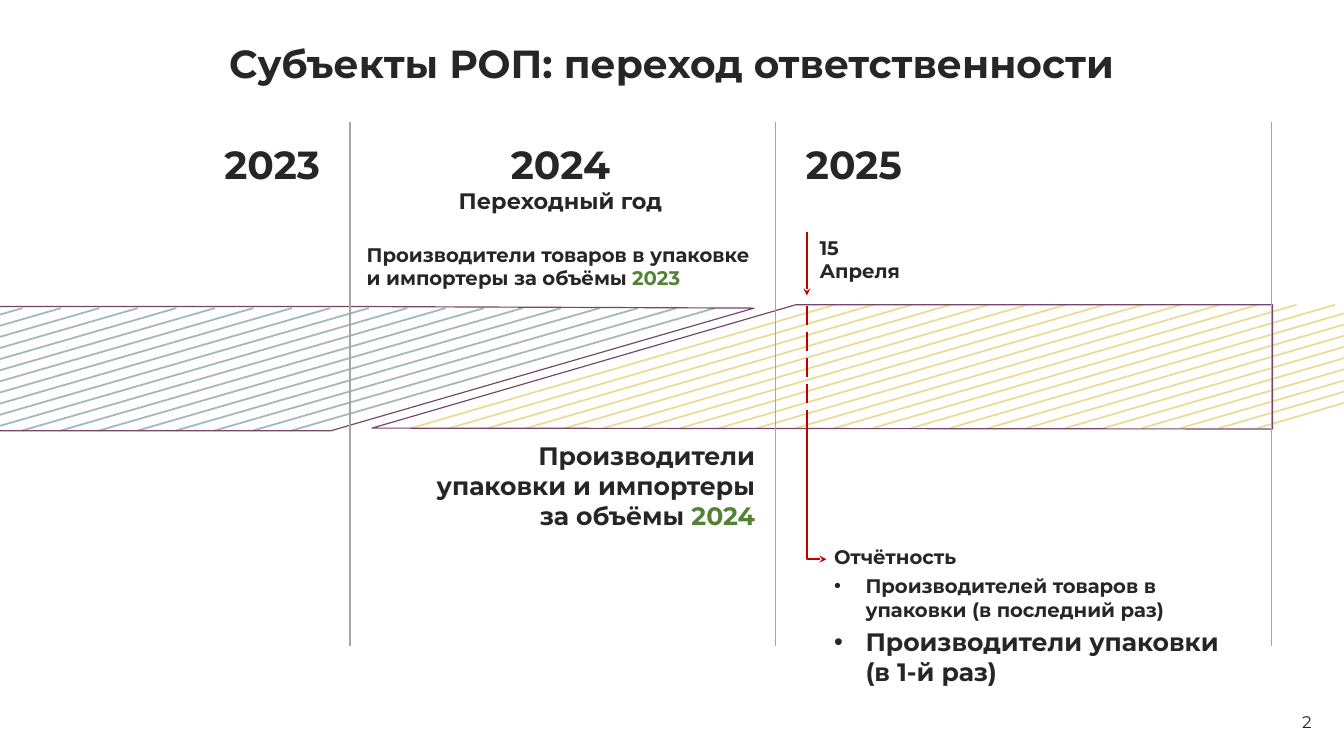
from lxml.etree import SubElement
from pptx import Presentation
from pptx.dml.color import RGBColor
from pptx.enum.dml import MSO_LINE
from pptx.enum.shapes import MSO_CONNECTOR
from pptx.enum.text import MSO_ANCHOR, MSO_AUTO_SIZE, PP_ALIGN
from pptx.oxml.ns import qn
from pptx.util import Inches, Pt

COLUMNS, ROWS = 160, 90
INK, GREEN, RED = "262626", "548235", "C00000"
TEAL, YELLOW, PLUM, GREY = "668B8A", "DFC453", "754668", "A6A6A6"
SMALL, MEDIUM, LARGE = 16.6, 21.3, 33.1


def rgb(value):
    return RGBColor.from_string(value)


class TimelineSlide:
    font_name = "Montserrat"

    def __init__(self, presentation):
        self.column = presentation.slide_width / COLUMNS
        self.row = presentation.slide_height / ROWS
        self.slide = presentation.slides.add_slide(presentation.slide_layouts[5])
        self.shapes = self.slide.shapes

    def point(self, x, y):
        return round(x * self.column), round(y * self.row)

    def title(self, text, box):
        shape = self.shapes.title
        shape.left, shape.top = self.point(*box[:2])
        shape.width, shape.height = self.point(*box[2:])
        self.fill_frame(shape, [text], LARGE, PP_ALIGN.CENTER)

    def text(self, box, paragraphs, size, align=PP_ALIGN.LEFT, **options):
        shape = self.shapes.add_textbox(*self.point(*box[:2]), *self.point(*box[2:]))
        self.fill_frame(shape, paragraphs, size, align, **options)
        return shape.text_frame

    def fill_frame(self, shape, paragraphs, size, align, bold=True):
        frame = shape.text_frame
        frame.word_wrap = True
        frame.auto_size = MSO_AUTO_SIZE.NONE
        frame.vertical_anchor = MSO_ANCHOR.TOP
        for index, text in enumerate(paragraphs):
            paragraph = frame.paragraphs[0] if index == 0 else frame.add_paragraph()
            paragraph.text = text.replace("\n", "\v")
            paragraph.alignment = align
            self.style(paragraph.font, size, bold)

    def style(self, font, size, bold):
        font.name, font.size, font.bold = self.font_name, Pt(size), bold
        font.color.rgb = rgb(INK)

    def bullet(self, frame, text, size):
        paragraph = frame.add_paragraph()
        paragraph.text = text.replace("\n", "\v")
        properties = paragraph._p.get_or_add_pPr()
        properties.set("marL", str(Inches(0.37)))
        properties.set("indent", str(-Inches(0.37)))
        SubElement(properties, qn("a:buFont"), typeface="Arial")
        SubElement(properties, qn("a:buChar"), char="•")
        self.style(paragraph.font, size, True)

    def line(self, start, end, color, width, shapes=None, opacity=None,
             dash=None, arrow=False, kind=MSO_CONNECTOR.STRAIGHT):
        connector = (shapes or self.shapes).add_connector(
            kind, *self.point(*start), *self.point(*end))
        connector.line.color.rgb = rgb(color)
        connector.line.width = Pt(width)
        if dash:
            connector.line.dash_style = dash
        properties = connector._element.spPr
        outline = properties.find(qn("a:ln"))
        if opacity:
            SubElement(outline.find(".//" + qn("a:srgbClr")), qn("a:alpha"),
                       val=str(opacity * 1000))
        if arrow:
            SubElement(outline, qn("a:tailEnd"), type="stealth")
        SubElement(properties, qn("a:effectLst"))
        return connector

    def down_then_right(self, start, end, color, width):
        """Draw an arrow with one corner as a flipped elbow turned by 270°."""
        (x1, y1), (x2, y2) = start, end
        middle_x, middle_y = (x1 + x2) / 2, (y1 + y2) / 2
        half_length, half_height = (y2 - y1) / 2, (x2 - x1) / 2
        connector = self.line(
            (middle_x + half_length, middle_y - half_height),
            (middle_x - half_length, middle_y + half_height),
            color, width, arrow=True, kind=MSO_CONNECTOR.ELBOW)
        properties = connector._element.spPr
        properties.find(qn("a:xfrm")).set("rot", str(270 * 60000))
        properties.find(qn("a:prstGeom")).set("prst", "bentConnector2")

    def hatch(self, first_x, step, count, bottom, top, color):
        """Draw equal slanted lines, each cut at the slide's edges."""
        run = 50.46
        slope = (top - bottom) / run
        group = self.shapes.add_group_shape()
        for index in range(count):
            x = first_x + index * step
            left, right = max(x, 0), min(x + run, COLUMNS)
            self.line((left, bottom + (left - x) * slope),
                      (right, bottom + (right - x) * slope),
                      color, 1.5, group.shapes, opacity=60)

    def outline(self, points, closed):
        corners = [self.point(*corner) for corner in points]
        builder = self.shapes.build_freeform(*corners[0])
        builder.add_line_segments(corners[1:], close=closed)
        shape = builder.convert_to_shape()
        shape.fill.background()
        shape.line.color.rgb = rgb(PLUM)
        shape.line.width = Pt(1)
        shape.shadow.inherit = False


def add_colored_year(frame, year):
    run = frame.paragraphs[0].add_run()
    run.text = year
    run.font.color.rgb = rgb(GREEN)


def main():
    presentation = Presentation()
    presentation.slide_width, presentation.slide_height = Inches(15.79), Inches(8.88)
    timeline = TimelineSlide(presentation)
    right, center = PP_ALIGN.RIGHT, PP_ALIGN.CENTER

    timeline.title("Субъекты РОП: переход ответственности", (8.41, 4.15, 143.08, 6.69))

    transition = timeline.text((45.19, 16.21, 43.07, 9.93), ["2024\n"], LARGE, center)
    caption = transition.paragraphs[0].add_run()
    caption.text = "Переходный год"
    caption.font.size = Pt(18.9)

    goods = timeline.text(
        (42.66, 28.37, 49.04, 6.69),
        ["Производители товаров в упаковке и импортеры за объёмы "], SMALL)
    add_colored_year(goods, "2023")
    packaging = timeline.text(
        (47.22, 51.88, 43.67, 11.96),
        ["Производители упаковки и импортеры за объёмы "], MEDIUM, right)
    add_colored_year(packaging, "2024")

    report = timeline.text((98.29, 64.35, 50.46, 18.24), ["Отчётность"], SMALL)
    timeline.bullet(report, "Производителей товаров в упаковки (в последний раз)", SMALL)
    timeline.bullet(report, "Производители упаковки \n(в 1-й раз)", MEDIUM)
    for paragraph in report.paragraphs:
        paragraph.space_after = Pt(4.7)

    deadline_x = 96.06
    timeline.down_then_right((deadline_x, 51.07), (98.39, 66.57), RED, 2)
    timeline.hatch(34.66, -4.58, 19, 51.27, 36.68, TEAL)
    timeline.hatch(48.94, 4.58, 23, 50.97, 36.28, YELLOW)
    timeline.outline([(94.74, 36.28), (151.49, 36.28), (151.49, 51.07), (44.28, 50.97)],
                     closed=True)
    timeline.line((deadline_x, 36.38), (deadline_x, 51.27), RED, 2,
                  dash=MSO_LINE.LONG_DASH)
    timeline.line((deadline_x, 27.66), (deadline_x, 35.16), RED, 2, arrow=True)
    timeline.text((96.57, 27.56, 43.07, 6.69), ["15\nАпреля"], SMALL)
    timeline.outline([(0, 51.27), (39.42, 51.27), (89.78, 36.68), (39.42, 36.48), (0, 36.48)],
                     closed=False)

    timeline.text((0, 16.21, 39.11, 6.69), ["2023"], LARGE, right)
    timeline.text((94.95, 16.21, 43.07, 6.69), ["2025"], LARGE)
    for year_end in (41.65, 92.31, 151.38):
        timeline.line((year_end, 14.49), (year_end, 76.91), GREY, 1.25)

    number = timeline.text((122, 83.6, 35.16, 4.76), ["2"], 14.2, right, bold=False)
    number.vertical_anchor = MSO_ANCHOR.MIDDLE
    presentation.save("out.pptx")


if __name__ == "__main__":
    main()
